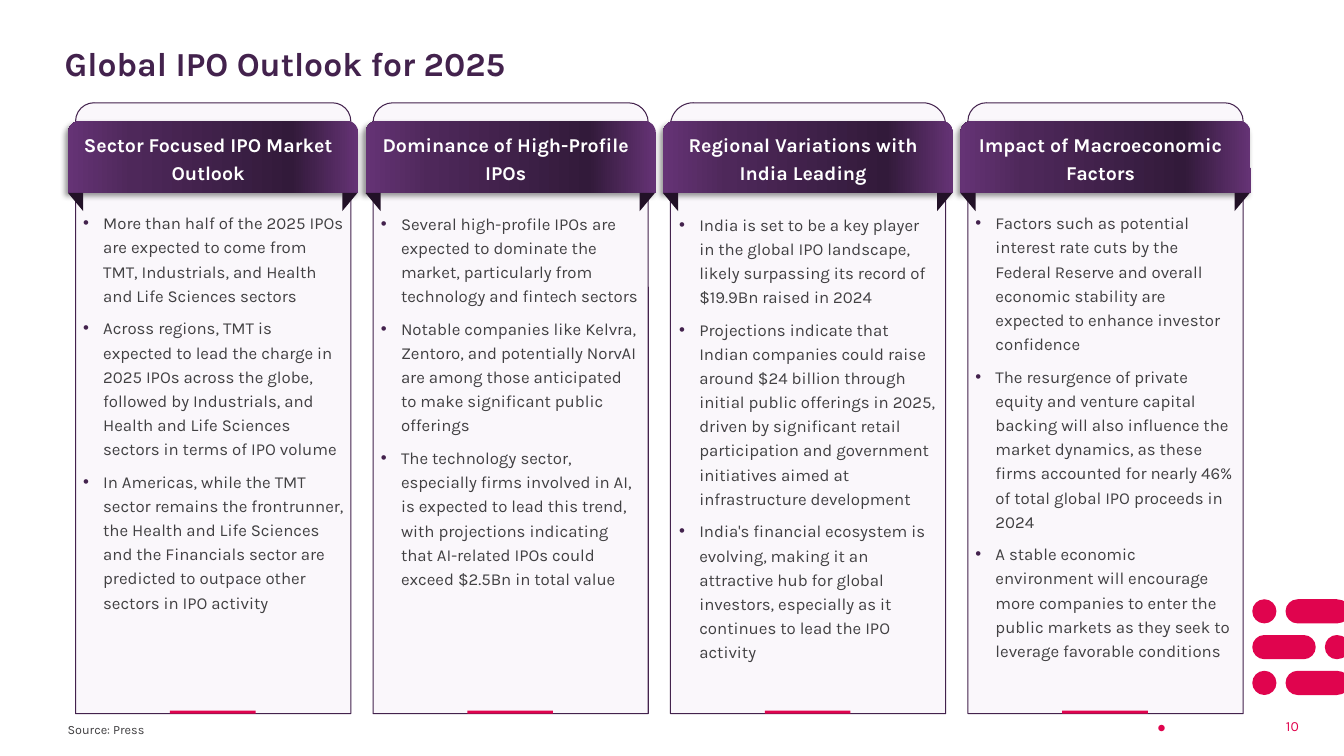
from lxml import etree
from pptx import Presentation
from pptx.dml.color import RGBColor
from pptx.enum.shapes import MSO_SHAPE
from pptx.enum.text import MSO_ANCHOR, PP_ALIGN
from pptx.oxml.ns import qn
from pptx.util import Inches, Pt

CARD = MSO_SHAPE.ROUND_2_SAME_RECTANGLE
BAR = MSO_SHAPE.RECTANGLE
FOLD = MSO_SHAPE.ISOSCELES_TRIANGLE
TOP, MIDDLE = MSO_ANCHOR.TOP, MSO_ANCHOR.MIDDLE
LEFT, CENTER, RIGHT = PP_ALIGN.LEFT, PP_ALIGN.CENTER, PP_ALIGN.RIGHT

SLIDE_W, SLIDE_H = 13.33, 7.5
PURPLE, CRIMSON, GREY = "43224D", "E0044E", "414042"
FIRST_COLUMN, COLUMN_PITCH = 0.75, 2.95
CARD_W, HEADER_W, FOLD_W, ACCENT_W = 2.73, 2.88, 0.15, 0.85
CARD_TOP, HEADER_TOP, FOLD_TOP, CARD_BOTTOM = 1.02, 1.2, 1.915, 7.08
HEADER_STOPS = [(0, "653375"), (23, "321A3A"), (78, "4E285A"), (100, "653375")]

PILL_H, PILL_PITCH, PILL_TOP = 0.24, 0.355, 5.945
DOT_THEN_BAR = [(12.42, 12.66), (12.75, 13.38)]
BAR_THEN_DOT = [(12.42, 13.05), (13.14, 13.38)]
PILL_ROWS = [DOT_THEN_BAR, BAR_THEN_DOT, DOT_THEN_BAR]

COLUMNS = [
    ("Sector Focused IPO Market Outlook", 0.067, [
        "More than half of the 2025 IPOs are expected to come from TMT, Industrials, "
        "and Health and Life Sciences sectors",
        "Across regions, TMT is expected to lead the charge in 2025 IPOs across the globe, "
        "followed by Industrials, and Health and Life Sciences sectors in terms of IPO volume",
        "In Americas, while the TMT sector remains the frontrunner, the Health and Life "
        "Sciences and the Financials sector are predicted to outpace other sectors in IPO "
        "activity"]),
    ("Dominance of High-Profile IPOs", 0.072, [
        "Several high-profile IPOs are expected to dominate the market, particularly from "
        "technology and fintech sectors",
        "Notable companies like Kelvra, Zentoro, and potentially NorvAI are among those "
        "anticipated to make significant public offerings",
        "The technology sector, especially firms involved in AI, is expected to lead this "
        "trend, with projections indicating that AI-related IPOs could exceed $2.5Bn in "
        "total value"]),
    ("Regional Variations with India Leading", 0.083, [
        "India is set to be a key player in the global IPO landscape, likely surpassing its "
        "record of $19.9Bn raised in 2024",
        "Projections indicate that Indian companies could raise around $24 billion through "
        "initial public offerings in 2025, driven by significant retail participation and "
        "government initiatives aimed at infrastructure development",
        "India's financial ecosystem is evolving, making it an attractive hub for global "
        "investors, especially as it continues to lead the IPO activity"]),
    ("Impact of Macroeconomic Factors", 0.067, [
        "Factors such as potential interest rate cuts by the Federal Reserve and overall "
        "economic stability are expected to enhance investor confidence",
        "The resurgence of private equity and venture capital backing will also influence "
        "the market dynamics, as these firms accounted for nearly 46% of total global IPO "
        "proceeds in 2024",
        "A stable economic environment will encourage more companies to enter the public "
        "markets as they seek to leverage favorable conditions"]),
]


def color(hex_value):
    return RGBColor.from_string(hex_value)


def add_xml(parent, tag, **attributes):
    return etree.SubElement(parent, qn(tag), attributes)


def write(shape, *texts, size, ink=GREY, font="Karla", bold=False, align=LEFT,
          anchor=MIDDLE, insets=(0, 0, 0, 0), spacing=1.0, gap=0, bullet=None):
    frame = shape.text_frame
    frame.word_wrap = True
    frame.vertical_anchor = anchor
    (frame.margin_left, frame.margin_top,
     frame.margin_right, frame.margin_bottom) = map(Inches, insets)
    for index, text in enumerate(texts):
        paragraph = frame.add_paragraph() if index else frame.paragraphs[0]
        paragraph.alignment = align
        paragraph.line_spacing = spacing
        paragraph.space_before = Pt(gap if index else 0)
        if bullet:
            add_bullet(paragraph, bullet)
        run = paragraph.add_run()
        run.text = text
        run.font.name, run.font.size, run.font.bold = font, Pt(size), bold
        run.font.color.rgb = color(ink)


def add_bullet(paragraph, mark):
    properties = paragraph._p.get_or_add_pPr()
    properties.set("marL", str(Inches(0.2)))
    properties.set("indent", str(Inches(-0.2)))
    add_xml(add_xml(properties, "a:buClr"), "a:srgbClr", val=PURPLE)
    add_xml(properties, "a:buFont", typeface="Arial")
    add_xml(properties, "a:buChar", char=mark)


def add_label(slide, box, text, **style):
    write(slide.shapes.add_textbox(*map(Inches, box)), text, **style)


def paint(shape, fill, outline=None):
    shape.shadow.inherit = False
    shape.fill.solid()
    shape.fill.fore_color.rgb = color(fill)
    if outline:
        shape.line.color.rgb = color(outline)
        shape.line.width = Pt(0.75)
    else:
        shape.line.fill.background()


def add_block(slide, kind, box, fill, outline=None):
    block = slide.shapes.add_shape(kind, *map(Inches, box))
    paint(block, fill, outline)
    return block


def add_sheen(block):
    block.fill.gradient()
    gradient = block._element.spPr.find(qn("a:gradFill"))
    for child in list(gradient):
        gradient.remove(child)
    stops = add_xml(gradient, "a:gsLst")
    for share, shade in HEADER_STOPS:
        stop = add_xml(stops, "a:gs", pos=str(share * 1000))
        add_xml(stop, "a:srgbClr", val=shade)
    add_xml(gradient, "a:lin", ang=str(180 * 60000), scaled="0")


def add_drop_shadow(block):
    effects = block._element.spPr.find(qn("a:effectLst"))
    shadow = add_xml(effects, "a:outerShdw", blurRad=str(Pt(4)), dist=str(Pt(3)),
                     dir=str(135 * 60000), algn="tr", rotWithShape="0")
    add_xml(add_xml(shadow, "a:srgbClr", val="000000"), "a:alpha", val="40000")


def add_card(slide, left, rounding, points):
    card = add_block(slide, CARD, (left, CARD_TOP, CARD_W, CARD_BOTTOM - CARD_TOP),
                     "FAF7FB", PURPLE)
    card.adjustments[0] = rounding
    write(card, *points, size=12, anchor=TOP, insets=(0.02, 1, 0.01, 0.05),
          spacing=1.2, gap=6, bullet="•")
    accent_left = left + (CARD_W - ACCENT_W) / 2 - 0.005
    add_block(slide, BAR, (accent_left, CARD_BOTTOM - 0.03, ACCENT_W, 0.03), CRIMSON)


def add_header(slide, card_left, heading):
    left = card_left - (HEADER_W - CARD_W) / 2
    header = add_block(slide, CARD, (left, HEADER_TOP, HEADER_W, FOLD_TOP - HEADER_TOP),
                       PURPLE)
    add_sheen(header)
    add_drop_shadow(header)
    write(header, heading, size=14, ink="FFFFFF", bold=True, align=CENTER,
          insets=(0, 0.05, 0.1, 0.1), spacing=1.2)
    for fold_left, flips in ((left, ["flipV"]),
                             (left + HEADER_W - FOLD_W - 0.01, ["flipH", "flipV"])):
        fold = add_block(slide, FOLD, (fold_left, FOLD_TOP, FOLD_W, 0.18), "221127")
        fold.adjustments[0] = 1
        for flip in flips:
            fold._element.spPr.xfrm.set(flip, "1")


def pill_segments(left, right, top):
    radius, bottom = PILL_H / 2, top + PILL_H
    middle, pull = top + radius, 0.55 * radius
    start, end = left + radius, right - radius
    if right > SLIDE_W:
        shoulder = SLIDE_W - 0.02
        cap = [[(end + 0.02, top), (end + 0.03, top), (shoulder, top + 0.01)],
               [(SLIDE_W, top + 0.02)], [(SLIDE_W, bottom - 0.02)],
               [(shoulder, bottom - 0.01)],
               [(end + 0.03, bottom), (end + 0.02, bottom), (end, bottom)]]
    else:
        cap = [[(end + pull, top), (right, middle - pull), (right, middle)],
               [(right, middle + pull), (end + pull, bottom), (end, bottom)]]
    return [[(start, top)], [(end, top)], *cap, [(start, bottom)],
            [(start - pull, bottom), (left, middle + pull), (left, middle)],
            [(left, middle - pull), (start - pull, top), (start, top)]]


def add_pills(slide):
    outlines = [pill_segments(left, right, PILL_TOP + row * PILL_PITCH)
                for row, pills in enumerate(PILL_ROWS) for left, right in pills]
    builder = None
    for (origin,), *segments in outlines:
        start = tuple(map(Inches, origin))
        if builder:
            builder.move_to(*start)
        else:
            builder = slide.shapes.build_freeform(*start)
        builder.add_line_segments([tuple(map(Inches, point))
                                   for segment in segments for point in segment])
    motif = builder.convert_to_shape()
    paint(motif, CRIMSON)
    steps = iter(list(motif._element.spPr.find(".//" + qn("a:path"))
                      .iterchildren(qn("a:lnTo"), qn("a:close"))))
    lengths = [[len(segment) for segment in outline[1:]] for outline in outlines]
    for pill in lengths:
        for length in pill:
            if length == 3:
                round_off([next(steps) for _ in range(length)])
            else:
                next(steps)
        next(steps)


def round_off(lines):
    curve = etree.Element(qn("a:cubicBezTo"))
    lines[0].addprevious(curve)
    for line in lines:
        curve.append(line[0])
        line.getparent().remove(line)


def main():
    deck = Presentation()
    deck.slide_width, deck.slide_height = Inches(SLIDE_W), Inches(SLIDE_H)
    slide = deck.slides.add_slide(deck.slide_layouts[6])
    add_label(slide, (11.48, 7.09, 0.09, 0.25), "●", size=10, ink=CRIMSON, font="Calibri")
    add_pills(slide)
    add_label(slide, (0.64, 0.43, 11.71, 0.44), "Global IPO Outlook for 2025", size=24,
              ink=PURPLE, bold=True, insets=(0, 0.05, 0, 0.05), spacing=0.9)
    lefts = [FIRST_COLUMN + index * COLUMN_PITCH for index in range(len(COLUMNS))]
    for left, (_, rounding, points) in zip(lefts, COLUMNS):
        add_card(slide, left, rounding, points)
    for left, (heading, _, _) in zip(lefts, COLUMNS):
        add_header(slide, left, heading)
    add_label(slide, (0.62, 7.16, 9.61, 0.18), "Source: Press", size=9,
              insets=(0.05, 0.05, 0.1, 0.05), spacing=0.9)
    add_label(slide, (12.56, 7.08, 0.42, 0.25), "10", size=10, ink=CRIMSON, align=RIGHT,
              insets=(0.1, 0, 0.1, 0))
    deck.save("out.pptx")


if __name__ == "__main__":
    main()
